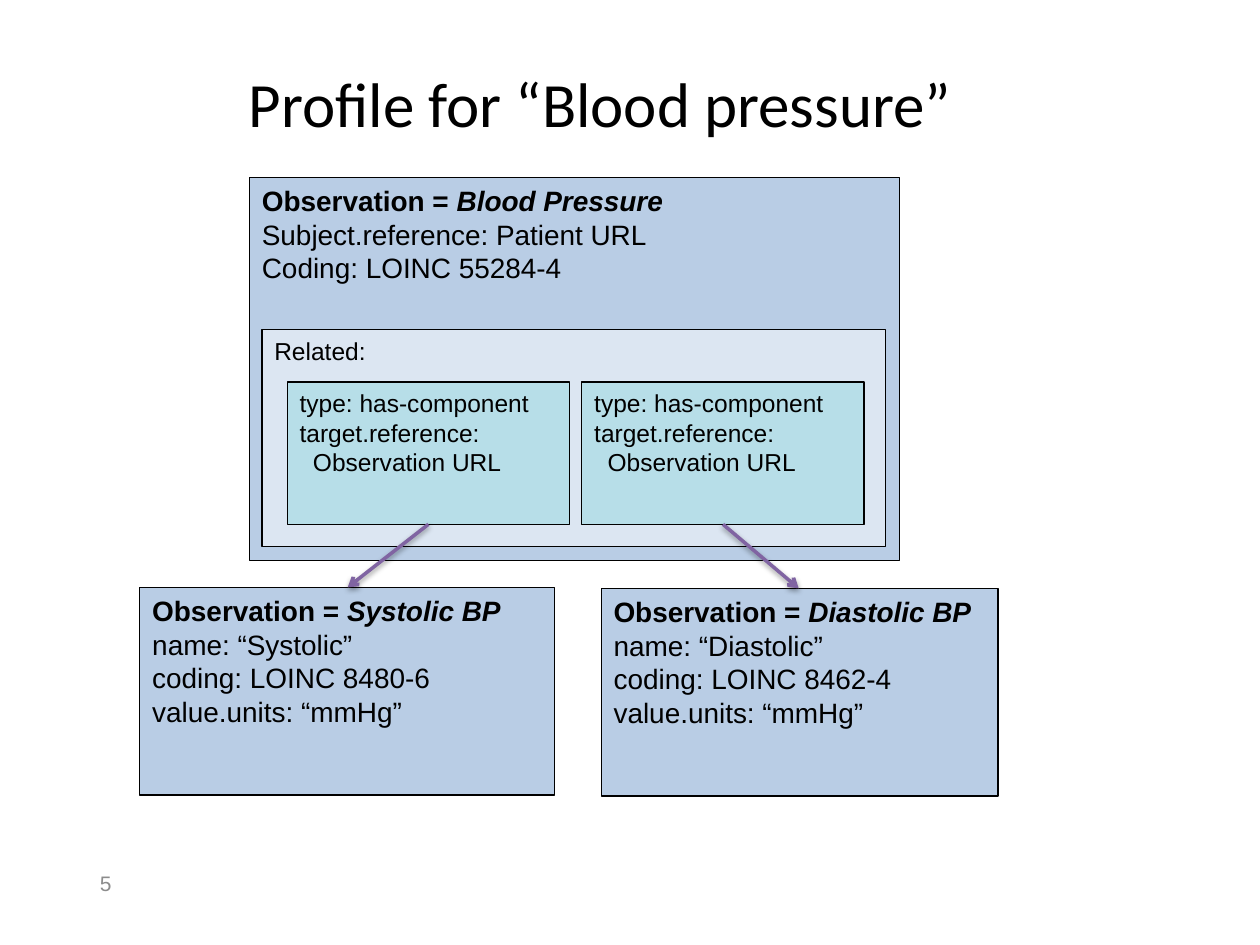
import lxml.etree
import pptx
import pptx.dml.color
import pptx.enum.shapes
import pptx.enum.text
import pptx.oxml
import pptx.oxml.ns
import pptx.util

Cm = pptx.util.Cm
Pt = pptx.util.Pt
align = pptx.enum.text.PP_ALIGN
anchor = pptx.enum.text.MSO_ANCHOR


def rgb(code):
    return pptx.dml.color.RGBColor.from_string(code)


def write(shape, lines, size, font="Arial", color="000000",
          side=align.LEFT, place=anchor.TOP):
    """Each line is a list of (text, bold, italic) runs."""
    frame = shape.text_frame
    frame.word_wrap = True
    frame.vertical_anchor = place
    for i, runs in enumerate(lines):
        para = frame.paragraphs[0] if i == 0 else frame.add_paragraph()
        para.alignment = side
        for text, bold, slant in runs:
            run = para.add_run()
            run.text = text
            run.font.name = font
            run.font.size = Pt(size)
            run.font.bold = bold
            run.font.italic = slant
            run.font.color.rgb = rgb(color)


deck = pptx.Presentation()
deck.slide_width = Cm(25.4)
deck.slide_height = Cm(19.05)
slide = deck.slides.add_slide(deck.slide_layouts[6])
shapes = slide.shapes

title = shapes.add_textbox(Cm(1.98), Cm(0.94), Cm(20.24), Cm(2.24))
write(title, [[("Profile for “Blood pressure”", False, False)]], 36,
      font="Calibri", side=align.CENTER, place=anchor.MIDDLE)

number = shapes.add_textbox(Cm(0.5), Cm(17.5), Cm(2), Cm(0.6))
write(number, [[("5", False, False)]], 12, color="8C8C8C",
      side=align.RIGHT, place=anchor.MIDDLE)

# Boxes from back to front: place, fill, text size, heading, plain lines
part = ["type: has-component", "target.reference:", "Observation URL"]
wide, high, top = 5.69, 2.87, 7.7
lefts = [5.79, 11.73]
boxes = [
    ((5.03, 3.58, 13.11, 7.72), "B9CDE5", 16, "Blood Pressure",
     ["Subject.reference: Patient URL", "Coding: LOINC 55284-4"]),
    ((2.82, 11.84, 8.36, 4.19), "B9CDE5", 16, "Systolic BP",
     ["name: “Systolic”", "coding: LOINC 8480-6", "value.units: “mmHg”"]),
    ((12.12, 11.86, 8, 4.19), "B9CDE5", 16, "Diastolic BP",
     ["name: “Diastolic”", "coding: LOINC 8462-4", "value.units: “mmHg”"]),
    ((5.28, 6.65, 12.57, 4.37), "DCE6F2", 14, None, ["Related:"]),
]
boxes += [((left, top, wide, high), "B7DEE8", 14, None, part)
          for left in lefts]

for place, fill, size, head, plain in boxes:
    box = shapes.add_shape(pptx.enum.shapes.MSO_SHAPE.RECTANGLE,
                           *[Cm(n) for n in place])
    box.shadow.inherit = False
    box.fill.solid()
    box.fill.fore_color.rgb = rgb(fill)
    box.line.color.rgb = rgb("000000")
    box.line.width = Pt(0.75)
    lines = [[(text, False, False)] for text in plain]
    if head:
        lines.insert(0, [("Observation = ", True, False), (head, True, True)])
    write(box, lines, size)
    if plain is part:
        last = box.text_frame.paragraphs[-1]
        last._p.get_or_add_pPr().set("marL", str(Cm(0.27)))

# Arrows from each component to its observation
shade = f"""<a:effectLst {pptx.oxml.ns.nsdecls("a")}>
  <a:outerShdw blurRad="40000" dist="20000" dir="5400000" rotWithShape="0">
    <a:srgbClr val="000000"><a:alpha val="38000"/></a:srgbClr>
  </a:outerShdw>
</a:effectLst>"""
for left, (endx, endy) in zip(lefts, [(7.01, 11.84), (16.1, 11.86)]):
    arrow = shapes.add_connector(
        pptx.enum.shapes.MSO_CONNECTOR.STRAIGHT,
        Cm(left + wide / 2), Cm(top + high), Cm(endx), Cm(endy))
    arrow.line.color.rgb = rgb("8064A2")
    arrow.line.width = Pt(2)
    tail = lxml.etree.SubElement(arrow.line._get_or_add_ln(),
                                 pptx.oxml.ns.qn("a:tailEnd"))
    tail.set("type", "arrow")
    arrow._element.spPr.append(pptx.oxml.parse_xml(shade))

deck.save("out.pptx")
